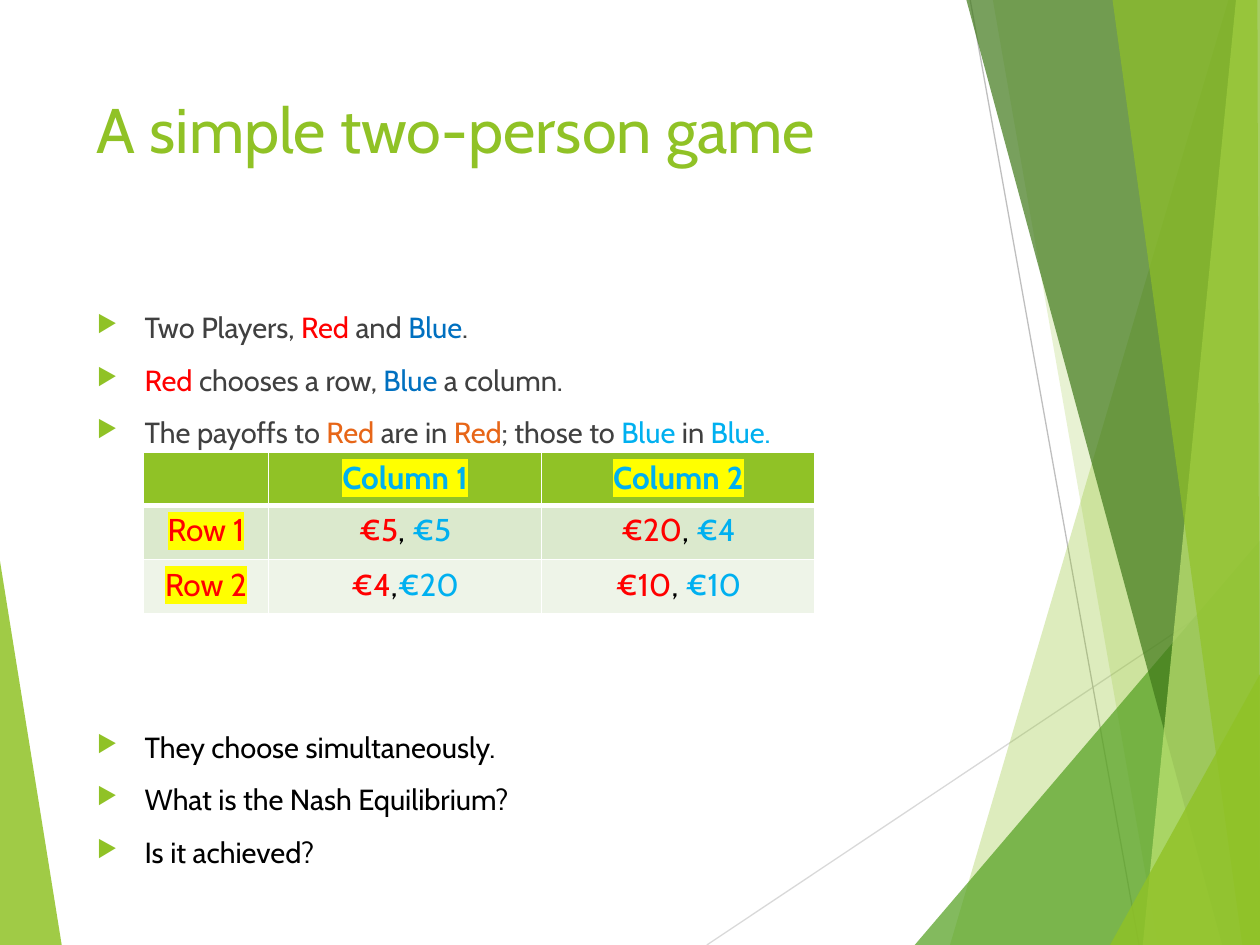
from lxml.etree import SubElement
from pptx import Presentation
from pptx.dml.color import RGBColor
from pptx.enum.shapes import MSO_CONNECTOR
from pptx.enum.text import MSO_ANCHOR, PP_ALIGN
from pptx.oxml.ns import qn
from pptx.util import Inches, Pt

FONT = "Cabin"
GREEN = RGBColor(0x90, 0xC2, 0x26)
LEAF = RGBColor(0x54, 0xA0, 0x21)
FOREST = RGBColor(0x3F, 0x78, 0x19)
LIME = RGBColor(0xC0, 0xE4, 0x74)
LIGHT_GREY = RGBColor(0xD9, 0xD9, 0xD9)
GREY = RGBColor(0xBF, 0xBF, 0xBF)
DARK_GREY = RGBColor(0x40, 0x40, 0x40)
BLACK = RGBColor(0, 0, 0)
WHITE = RGBColor(0xFF, 0xFF, 0xFF)
RED = RGBColor(0xFF, 0, 0)
ORANGE = RGBColor(0xE7, 0x66, 0x18)
BLUE = RGBColor(0, 0x70, 0xC0)
SKY = RGBColor(0, 0xB0, 0xF0)
YELLOW = RGBColor(0xFF, 0xFF, 0)
BAND_DARK = RGBColor(0xDB, 0xE9, 0xCD)
BAND_LIGHT = RGBColor(0xEE, 0xF4, 0xE8)

FACETS = [
    ([(-0.01, 4.39), (0.49, 7.5), (-0.01, 7.5)], GREEN, 85),
    ([(9.75, 0), (7.54, 7.5), (10, 7.5), (10, 0)], GREEN, 30),
    ([(7.88, 0), (9.19, 7.5), (10, 7.5), (10, 0)], GREEN, 20),
    ([(7.26, 7.5), (10, 4.29), (10, 7.5)], LEAF, 72),
    ([(7.67, 0), (9.7, 7.5), (10, 7.5), (10, 0)], FOREST, 70),
    ([(9.81, 0), (9.07, 7.5), (10, 7.5), (10, 0)], LIME, 70),
    ([(8.83, 0), (9.86, 7.5), (10, 7.5), (9.98, 0)], GREEN, 65),
    ([(8.81, 7.5), (10, 5.35), (10, 7.5)], GREEN, 80),
]
RAYS = [
    ((5.61, 7.5), (10, 4.57), LIGHT_GREY),
    ((7.7, 0), (9.04, 7.5), GREY),
]
BULLETS = [
    (0, [("Two Players, ", DARK_GREY), ("Red", RED), (" and ", DARK_GREY),
         ("Blue", BLUE), (".", DARK_GREY)]),
    (10, [("Red", RED), (" chooses a row, ", DARK_GREY), ("Blue", BLUE),
          (" a column.", DARK_GREY)]),
    (10, [("The payoffs to ", DARK_GREY), ("Red", ORANGE), (" are in ", DARK_GREY),
          ("Red", ORANGE), ("; those to ", DARK_GREY), ("Blue", SKY),
          (" in ", DARK_GREY), ("Blue.", SKY)]),
    (160, [("They choose simultaneously.", BLACK)]),
    (10, [("What is the Nash Equilibrium?", BLACK)]),
    (10, [("Is it achieved?", BLACK)]),
]
COLUMN_HEADS = ["Column 1", "Column 2"]
PAYOFF_ROWS = [
    ("Row 1", BAND_DARK, [("€5", ", ", "€5"), ("€20", ", ", "€4")]),
    ("Row 2", BAND_LIGHT, [("€4", ",", "€20"), ("€10", ", ", "€10")]),
]


def add_run(paragraph, text, size=18, color=BLACK, bold=False, highlight=None):
    run = paragraph.add_run()
    run.text = text
    run.font.name = FONT
    run.font.size = Pt(size)
    run.font.bold = bold
    run.font.color.rgb = color
    if highlight is not None:
        properties = run.font._element
        mark = SubElement(properties, qn("a:highlight"))
        SubElement(mark, qn("a:srgbClr"), val=str(highlight))
        properties.find(qn("a:solidFill")).addnext(mark)


def add_text_frame(slide, left, top, width, height):
    box = slide.shapes.add_textbox(Inches(left), Inches(top), Inches(width), Inches(height))
    box.text_frame.word_wrap = True
    box.text_frame.vertical_anchor = MSO_ANCHOR.TOP
    return box.text_frame


def add_facet(slide, points, color, opacity):
    corners = [(Inches(x), Inches(y)) for x, y in points]
    builder = slide.shapes.build_freeform(*corners[0])
    builder.add_line_segments(corners[1:], close=True)
    shape = builder.convert_to_shape()
    shape.shadow.inherit = False
    shape.fill.solid()
    shape.fill.fore_color.rgb = color
    shape.line.fill.background()
    tint = shape._element.spPr.find(qn("a:solidFill")).find(qn("a:srgbClr"))
    SubElement(tint, qn("a:alpha"), val=str(opacity * 1000))


def add_ray(slide, start, end, color):
    ends = [Inches(value) for value in start + end]
    connector = slide.shapes.add_connector(MSO_CONNECTOR.STRAIGHT, *ends)
    connector.line.color.rgb = color
    connector.line.width = Pt(0.75)
    SubElement(connector._element.spPr, qn("a:effectLst"))


def add_backdrop(slide):
    add_facet(slide, *FACETS[0])
    for ray in RAYS:
        add_ray(slide, *ray)
    for facet in FACETS[1:]:
        add_facet(slide, *facet)


def add_title(slide, left, top, width, height):
    frame = add_text_frame(slide, left, top, width, height)
    add_run(frame.paragraphs[0], "A simple two-person game", size=36, color=GREEN)


def set_bullet(paragraph):
    properties = paragraph._element.get_or_add_pPr()
    indent = Inches(0.38)
    properties.set("marL", str(indent))
    properties.set("indent", str(-indent))
    color = SubElement(properties, qn("a:buClr"))
    SubElement(color, qn("a:srgbClr"), val=str(GREEN))
    SubElement(properties, qn("a:buSzPct"), val="80000")
    SubElement(properties, qn("a:buChar"), char="▶")


def add_body(slide, left, top, width, height):
    frame = add_text_frame(slide, left, top, width, height)
    for index, (space, runs) in enumerate(BULLETS):
        paragraph = frame.add_paragraph() if index else frame.paragraphs[0]
        paragraph.space_before = Pt(space)
        set_bullet(paragraph)
        for text, color in runs:
            add_run(paragraph, text, size=16.6, color=color)


def set_borders(cell, top, bottom):
    properties = cell._tc.get_or_add_tcPr()
    for side, width in (("L", 1), ("R", 1), ("T", top), ("B", bottom)):
        line = SubElement(properties, qn(f"a:ln{side}"), w=str(Pt(width)))
        fill = SubElement(line, qn("a:solidFill"))
        SubElement(fill, qn("a:srgbClr"), val=str(WHITE))


def style_cell(cell, color, top=1, bottom=1):
    set_borders(cell, top, bottom)
    cell.fill.solid()
    cell.fill.fore_color.rgb = color
    paragraph = cell.text_frame.paragraphs[0]
    paragraph.alignment = PP_ALIGN.CENTER
    return paragraph


def add_payoff_table(slide, left, top, column_widths, row_heights):
    table = slide.shapes.add_table(
        len(row_heights), len(column_widths), Inches(left), Inches(top),
        Inches(sum(column_widths)), Inches(sum(row_heights))).table
    for column, width in zip(table.columns, column_widths):
        column.width = Inches(width)
    for row, height in zip(table.rows, row_heights):
        row.height = Inches(height)

    style_cell(table.cell(0, 0), GREEN, bottom=3)
    for column, head in enumerate(COLUMN_HEADS, 1):
        paragraph = style_cell(table.cell(0, column), GREEN, bottom=3)
        add_run(paragraph, head, color=SKY, bold=True, highlight=YELLOW)
    for row, (head, band, payoffs) in enumerate(PAYOFF_ROWS, 1):
        border = 3 if row == 1 else 1
        paragraph = style_cell(table.cell(row, 0), band, top=border)
        add_run(paragraph, head, color=RED, highlight=YELLOW)
        for column, payoff in enumerate(payoffs, 1):
            paragraph = style_cell(table.cell(row, column), band, top=border)
            for text, color in zip(payoff, (RED, BLACK, SKY)):
                add_run(paragraph, text, color=color)


def main():
    presentation = Presentation()
    presentation.slide_width = Inches(10)
    presentation.slide_height = Inches(7.5)
    slide = presentation.slides.add_slide(presentation.slide_layouts[6])
    add_backdrop(slide)
    add_title(slide, 0.67, 0.67, 6.94, 1.44)
    add_body(slide, 0.67, 2.41, 6.94, 4.24)
    add_payoff_table(slide, 1.14, 3.59, [0.99, 2.17, 2.17], [0.42, 0.43, 0.43])
    presentation.save("out.pptx")


if __name__ == "__main__":
    main()
